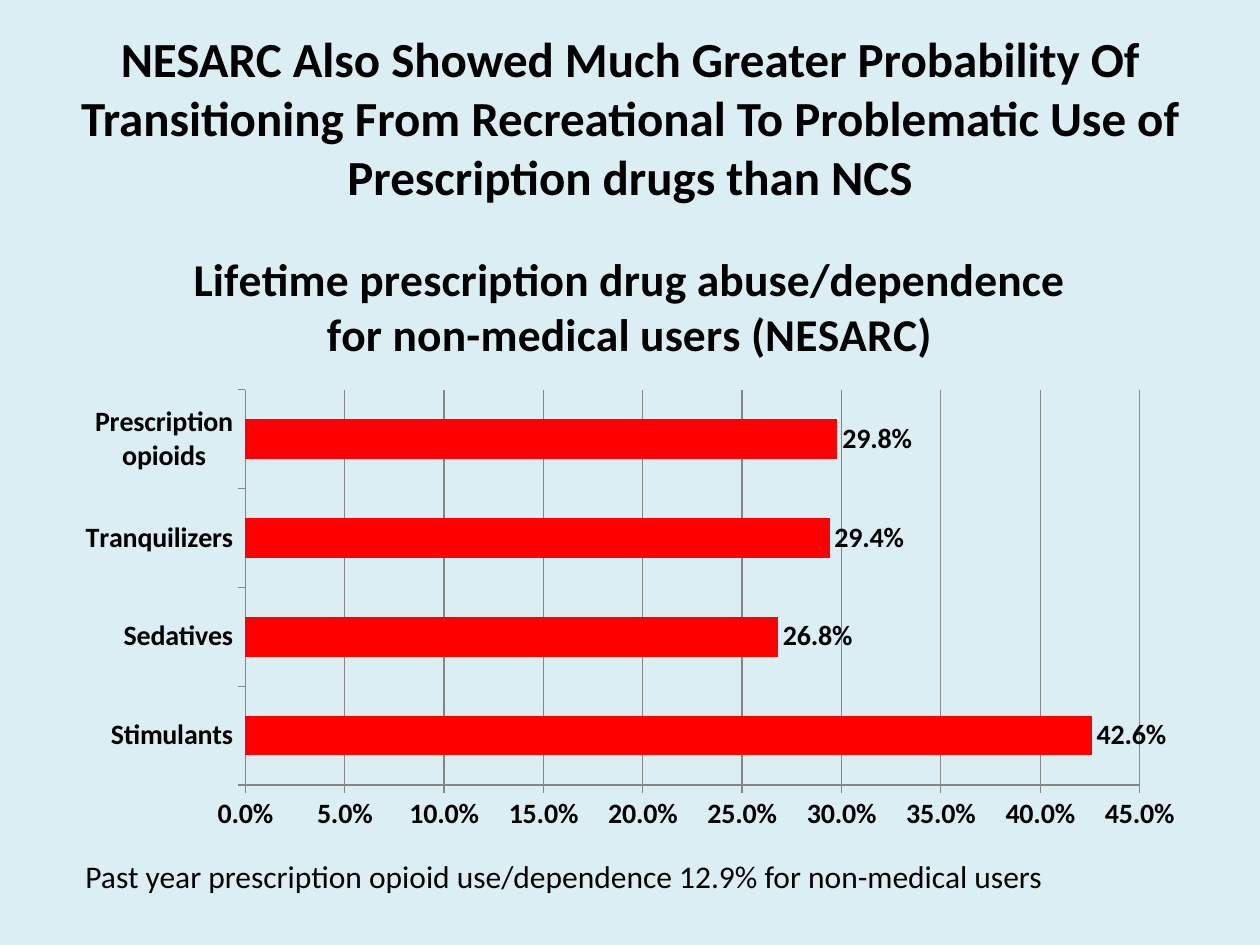
"""Build a slide on prescription drug abuse among non-medical users."""
from pptx import Presentation
from pptx.chart.data import CategoryChartData
from pptx.dml.color import RGBColor
from pptx.enum import chart as ch, text
from pptx.util import Inches, Pt

FONT = "Calibri"
BLACK, RED, GREY, PALE_BLUE = "000000", "FF0000", "868686", "DBEEF4"
PERCENT = "0.0%"
RATES = {
    "Stimulants": 0.426,
    "Sedatives": 0.268,
    "Tranquilizers": 0.294,
    "Prescription opioids": 0.298,
}


def paint(fill, color):
    """Make a fill solid in a hex colour."""
    fill.solid()
    fill.fore_color.rgb = RGBColor.from_string(color)


def style_font(font, size, bold=False):
    """Set the slide's typeface at a given size and weight."""
    font.name, font.size, font.bold = FONT, Pt(size), bold
    font.color.rgb = RGBColor.from_string(BLACK)


def add_text(slide, wording, box, size, bold=False,
             align=text.PP_ALIGN.LEFT, anchor=text.MSO_ANCHOR.TOP):
    """Add a wrapped one-paragraph text box."""
    frame = slide.shapes.add_textbox(*map(Inches, box)).text_frame
    frame.word_wrap = True
    frame.vertical_anchor = anchor
    paragraph = frame.paragraphs[0]
    paragraph.text = wording
    paragraph.alignment = align
    style_font(paragraph.font, size, bold)


def style_axis(axis, gridlines):
    """Give an axis grey lines and outside ticks."""
    axis.has_major_gridlines = gridlines
    axis.major_tick_mark = ch.XL_TICK_MARK.OUTSIDE
    lines = [axis.format.line]
    if gridlines:
        lines.append(axis.major_gridlines.format.line)
    for line in lines:
        paint(line.fill, GREY)
        line.width = Pt(0.75)


def add_rate_chart(slide, heading, box):
    """Add the bar chart of abuse rates by drug."""
    rates = CategoryChartData(number_format=PERCENT)
    rates.categories = list(RATES)
    rates.add_series("Series 1", list(RATES.values()))
    chart = slide.shapes.add_chart(
        ch.XL_CHART_TYPE.BAR_CLUSTERED, *map(Inches, box), rates).chart
    style_font(chart.font, 16, True)
    chart.has_legend = False
    chart.has_title = True
    chart.chart_title.include_in_layout = False
    title = chart.chart_title.text_frame.paragraphs[0]
    title.text = heading
    style_font(title.font, 26, True)

    style_axis(chart.category_axis, False)
    style_axis(chart.value_axis, True)
    chart.value_axis.tick_labels.number_format = PERCENT
    chart.value_axis.tick_labels.number_format_is_linked = False

    plot = chart.plots[0]
    plot.gap_width = 150
    plot.vary_by_categories = False
    bars = plot.series[0]
    paint(bars.format.fill, RED)
    labels = bars.data_labels
    labels.show_value = True
    labels.number_format = PERCENT
    labels.number_format_is_linked = False
    labels.position = ch.XL_LABEL_POSITION.OUTSIDE_END
    style_font(labels.font, 16, True)


def main():
    """Build and save the slide."""
    deck = Presentation()
    deck.slide_width, deck.slide_height = Inches(10), Inches(7.5)
    slide = deck.slides.add_slide(deck.slide_layouts[6])
    paint(slide.background.fill, PALE_BLUE)
    add_text(slide, "NESARC Also Showed Much Greater Probability Of "
             "Transitioning From Recreational To Problematic Use of "
             "Prescription drugs than NCS", (0.5, 0.3, 9, 1.25), 28, True,
             text.PP_ALIGN.CENTER, text.MSO_ANCHOR.MIDDLE)
    add_rate_chart(slide, "Lifetime prescription drug abuse/dependence "
                   "for non-medical users (NESARC)", (0.5, 1.75, 9, 4.95))
    add_text(slide, "Past year prescription opioid use/dependence 12.9% "
             "for non-medical users", (0.58, 6.75, 7.83, 0.4), 18)
    deck.save("out.pptx")


if __name__ == "__main__":
    main()
